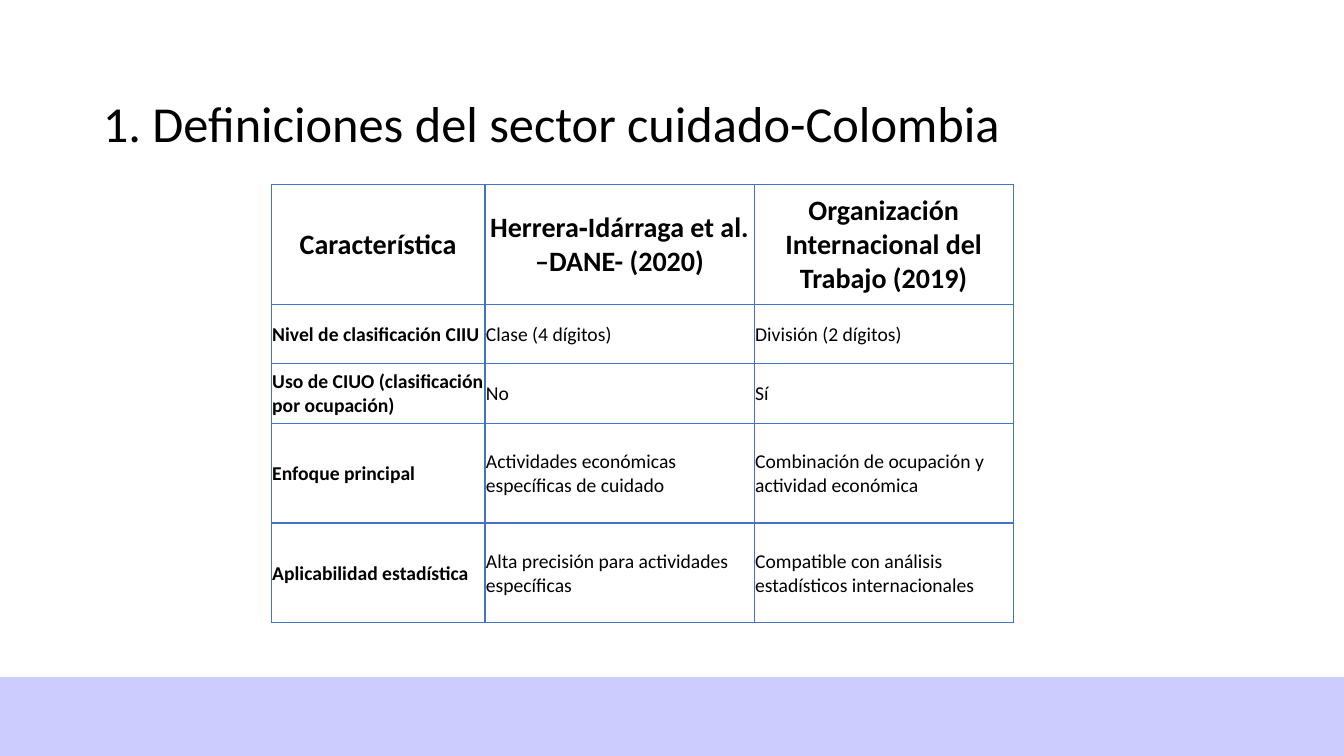
from lxml.etree import SubElement
from pptx import Presentation
from pptx.dml.color import RGBColor
from pptx.enum.shapes import MSO_SHAPE
from pptx.enum.text import MSO_ANCHOR, PP_ALIGN
from pptx.oxml.ns import qn
from pptx.util import Inches, Pt

BLACK = RGBColor(0x00, 0x00, 0x00)
BLUE = RGBColor(0x44, 0x72, 0xC4)
LILAC = RGBColor(0xCC, 0xCC, 0xFF)
FONT = "Calibri"

WIDTHS = [2.12, 2.67, 2.57]
HEIGHTS = [1.19, 0.59, 0.59, 0.99, 0.99]
ROWS = [
    ["Característica", "Herrera‑Idárraga et al. –DANE- (2020)",
     "Organización Internacional del Trabajo (2019)"],
    ["Nivel de clasificación CIIU", "Clase (4 dígitos)", "División (2 dígitos)"],
    ["Uso de CIUO (clasificación por ocupación)", "No", "Sí"],
    ["Enfoque principal", "Actividades económicas específicas de cuidado",
     "Combinación de ocupación y actividad económica"],
    ["Aplicabilidad estadística", "Alta precisión para actividades específicas",
     "Compatible con análisis estadísticos internacionales"],
]


def style(par, size, bold, align):
    par.alignment = align
    for run in par.runs:
        font = run.font
        font.name = FONT
        font.size = Pt(size)
        font.bold = bold
        font.color.rgb = BLACK


def add_band(slide):
    band = slide.shapes.add_shape(
        MSO_SHAPE.RECTANGLE, 0, Inches(6.72), Inches(13.33), Inches(0.78))
    band.shadow.inherit = False
    band.fill.solid()
    band.fill.fore_color.rgb = LILAC
    band.line.color.rgb = LILAC
    band.line.width = Pt(1)


def set_title(slide, text):
    title = slide.shapes.title
    title.left, title.top = Inches(0.92), Inches(0.53)
    title.width, title.height = Inches(11.5), Inches(1.45)
    frame = title.text_frame
    frame.text = text
    frame.word_wrap = True
    frame.vertical_anchor = MSO_ANCHOR.MIDDLE
    par = frame.paragraphs[0]
    par.line_spacing = 0.9
    style(par, 36, False, PP_ALIGN.LEFT)


def add_edges(cell):
    props = cell._tc.get_or_add_tcPr()
    for side in ("a:lnL", "a:lnR", "a:lnT", "a:lnB"):
        edge = SubElement(props, qn(side), w=str(Pt(1)))
        fill = SubElement(edge, qn("a:solidFill"))
        SubElement(fill, qn("a:srgbClr"), val=str(BLUE))


def fill_cell(cell, text, head, bold):
    add_edges(cell)
    cell.fill.background()
    cell.margin_left = cell.margin_right = cell.margin_top = Inches(0.01)
    cell.margin_bottom = 0
    cell.vertical_anchor = MSO_ANCHOR.MIDDLE
    cell.text_frame.text = text
    style(cell.text_frame.paragraphs[0], 20 if head else 14, bold,
          PP_ALIGN.CENTER if head else PP_ALIGN.LEFT)


def add_grid(slide):
    table = slide.shapes.add_table(
        len(ROWS), len(WIDTHS), Inches(2.69), Inches(1.83),
        Inches(sum(WIDTHS)), Inches(sum(HEIGHTS))).table
    table.horz_banding = False
    for col, width in zip(table.columns, WIDTHS):
        col.width = Inches(width)
    for row, height in zip(table.rows, HEIGHTS):
        row.height = Inches(height)
    # The first row and first column are bold
    for r, texts in enumerate(ROWS):
        for c, text in enumerate(texts):
            fill_cell(table.cell(r, c), text, r == 0, r == 0 or c == 0)


def main():
    deck = Presentation()
    deck.slide_width, deck.slide_height = Inches(13.33), Inches(7.5)
    slide = deck.slides.add_slide(deck.slide_layouts[5])
    # Footer band
    add_band(slide)
    # Title
    set_title(slide, "1. Definiciones del sector cuidado-Colombia")
    # Comparison table
    add_grid(slide)
    deck.save("out.pptx")


if __name__ == "__main__":
    main()
